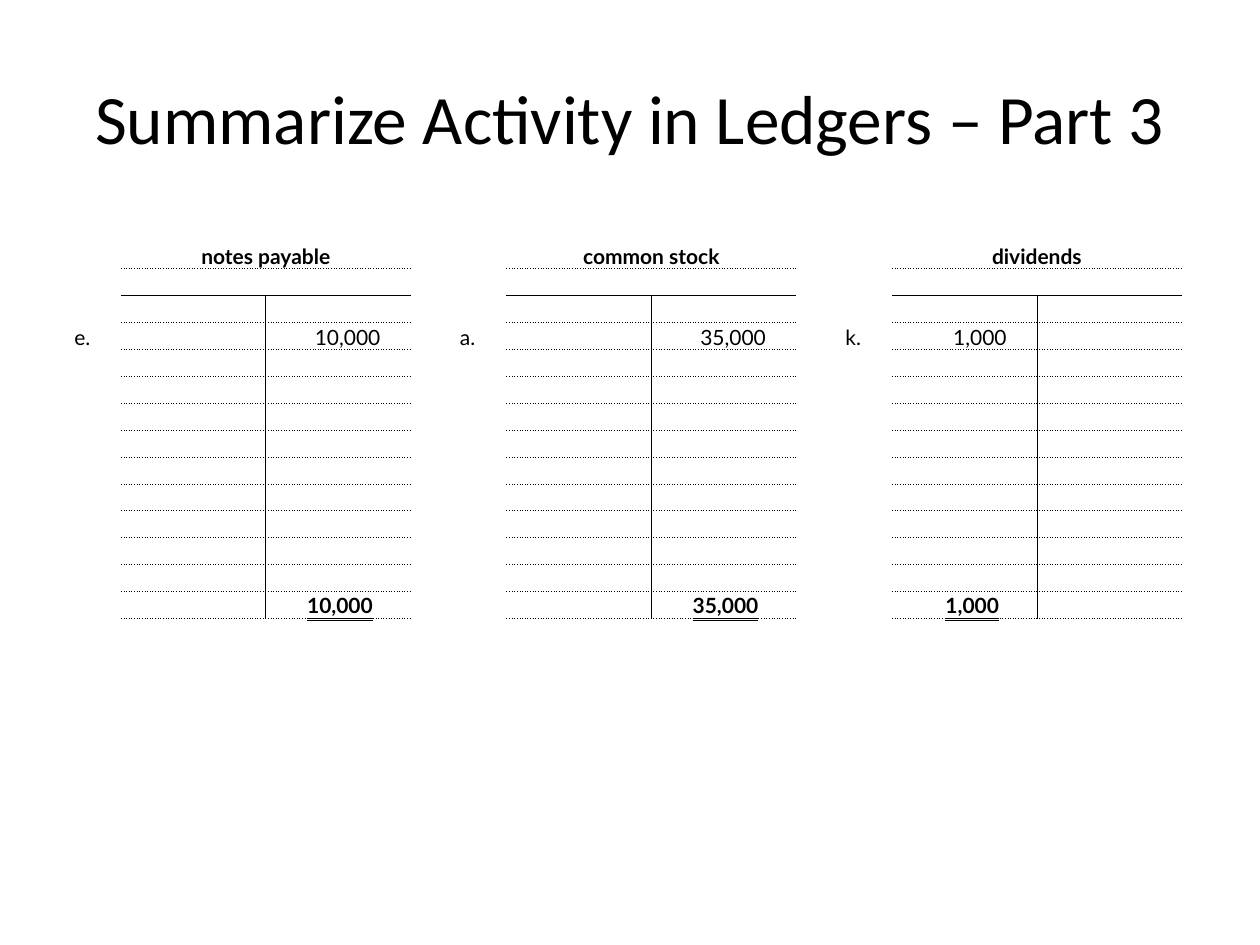
from lxml.etree import SubElement
from pptx import Presentation
from pptx.dml.color import RGBColor
from pptx.enum.text import MSO_ANCHOR, MSO_UNDERLINE, PP_ALIGN
from pptx.oxml.ns import qn
from pptx.util import Inches, Pt

COLORS = {"ink": "000000"}
ROWS = 14
HEADING_ROW, RULE_ROW, ENTRY_ROW, TOTAL_ROW = 0, 1, 3, ROWS - 1
MARGIN, SIDE = 0.38, 1.15
LEDGER_COLUMNS = [MARGIN, SIDE, SIDE]
STRIDE = len(LEDGER_COLUMNS) + 1
NO_STYLE = "{2D5ABB26-0587-4C30-8999-92F81FD0307C}"
DEBIT, CREDIT = 1, 2
LEDGERS = [
    ("notes payable", "e.", CREDIT, "10,000"),
    ("common stock", "a.", CREDIT, "35,000"),
    ("dividends", "k.", DEBIT, "1,000"),
]


def format_span(span, font, size, bold=False):
    """Give one run its font, size, weight and colour."""
    span.font.name = font
    span.font.size = Pt(size)
    span.font.bold = bold
    span.font.color.rgb = RGBColor.from_string(COLORS["ink"])


def add_title(slide, text, box):
    """Place the title placeholder in its box."""
    title = slide.shapes.title
    title.left, title.top, title.width, title.height = map(Inches, box)
    frame = title.text_frame
    frame.text = text
    frame.word_wrap = True
    frame.vertical_anchor = MSO_ANCHOR.MIDDLE
    para = frame.paragraphs[0]
    para.alignment = PP_ALIGN.CENTER
    format_span(para.runs[0], "Calibri", 39.6)


def rule_cell(cell, **edges):
    """Draw the named edges of a cell and hide the others."""
    properties = cell._tc.get_or_add_tcPr()
    for edge in "LRTB":
        line = SubElement(properties, qn(f"a:ln{edge}"), w=str(Pt(0.5)))
        if edge not in edges:
            SubElement(line, qn("a:noFill"))
            continue
        fill = SubElement(line, qn("a:solidFill"))
        SubElement(fill, qn("a:srgbClr"), val=COLORS["ink"])
        SubElement(line, qn("a:prstDash"), val=edges[edge])
    cell.fill.background()


def write_cell(cell, text, bold=False, alignment=PP_ALIGN.LEFT):
    """Write formatted text in a cell and return its paragraph."""
    cell.text = text
    para = cell.text_frame.paragraphs[0]
    para.alignment = alignment
    format_span(para.runs[0], "Lato", 12, bold)
    return para


def write_amount(cell, amount, edge, total=False):
    """Write an amount that ends at a right tab stop."""
    para = write_cell(cell, "\t" + amount, bold=total)
    stops = SubElement(para._p.get_or_add_pPr(), qn("a:tabLst"))
    SubElement(stops, qn("a:tab"), pos=str(Inches(edge)), algn="r")
    if total:
        para.runs[0].font.underline = MSO_UNDERLINE.DOUBLE_LINE


def fill_ledger(table, first, name, mark, side, amount):
    """Fill one T account whose margin is the given table column."""
    heading = table.cell(HEADING_ROW, first + DEBIT)
    heading.merge(table.cell(HEADING_ROW, first + CREDIT))
    write_cell(heading, name, True, PP_ALIGN.CENTER)
    write_cell(table.cell(ENTRY_ROW, first), mark)
    write_amount(table.cell(ENTRY_ROW, first + side), amount, 0.9)
    write_amount(table.cell(TOTAL_ROW, first + side), amount, 0.84, total=True)


def edges_at(row, column):
    """Return the ruled edges of a cell by its place in the grid."""
    place = column % STRIDE
    if place not in (DEBIT, CREDIT):
        return {}
    edges = {"B": "solid" if row == RULE_ROW else "sysDot"}
    if row > HEADING_ROW:
        edges["T"] = "solid" if row == RULE_ROW + 1 else "sysDot"
    if row > RULE_ROW:
        edges["R" if place == DEBIT else "L"] = "solid"
    return edges


def add_ledgers(slide, box):
    """Place the table of T accounts in its box."""
    widths = ((LEDGER_COLUMNS + [MARGIN]) * len(LEDGERS))[:-1]
    frame = slide.shapes.add_table(ROWS, len(widths), *map(Inches, box))
    table = frame.table
    table.first_row = table.horz_banding = False
    table._tbl.tblPr.find(qn("a:tableStyleId")).text = NO_STYLE
    for column, width in zip(table.columns, widths):
        column.width = Inches(width)
    for row_index, row in enumerate(table.rows):
        row.height = Inches(box[3] / ROWS)
        for column_index, cell in enumerate(row.cells):
            cell.margin_left = cell.margin_right = cell.margin_top = Inches(0.01)
            cell.margin_bottom = 0
            cell.vertical_anchor = MSO_ANCHOR.BOTTOM
            rule_cell(cell, **edges_at(row_index, column_index))
            SubElement(cell.text_frame.paragraphs[0]._p, qn("a:endParaRPr"), sz="1200")
    for index, ledger in enumerate(LEDGERS):
        fill_ledger(table, index * STRIDE, *ledger)


def main():
    """Build the slide and save the deck."""
    deck = Presentation()
    deck.slide_width, deck.slide_height = Inches(10), Inches(7.5)
    slide = deck.slides.add_slide(deck.slide_layouts[5])
    add_title(slide, "Summarize Activity in Ledgers – Part 3", (0.5, 0.3, 9, 1.25))
    add_ledgers(slide, (0.58, 1.92, 8.79, 2.95))
    deck.save("out.pptx")


if __name__ == "__main__":
    main()
